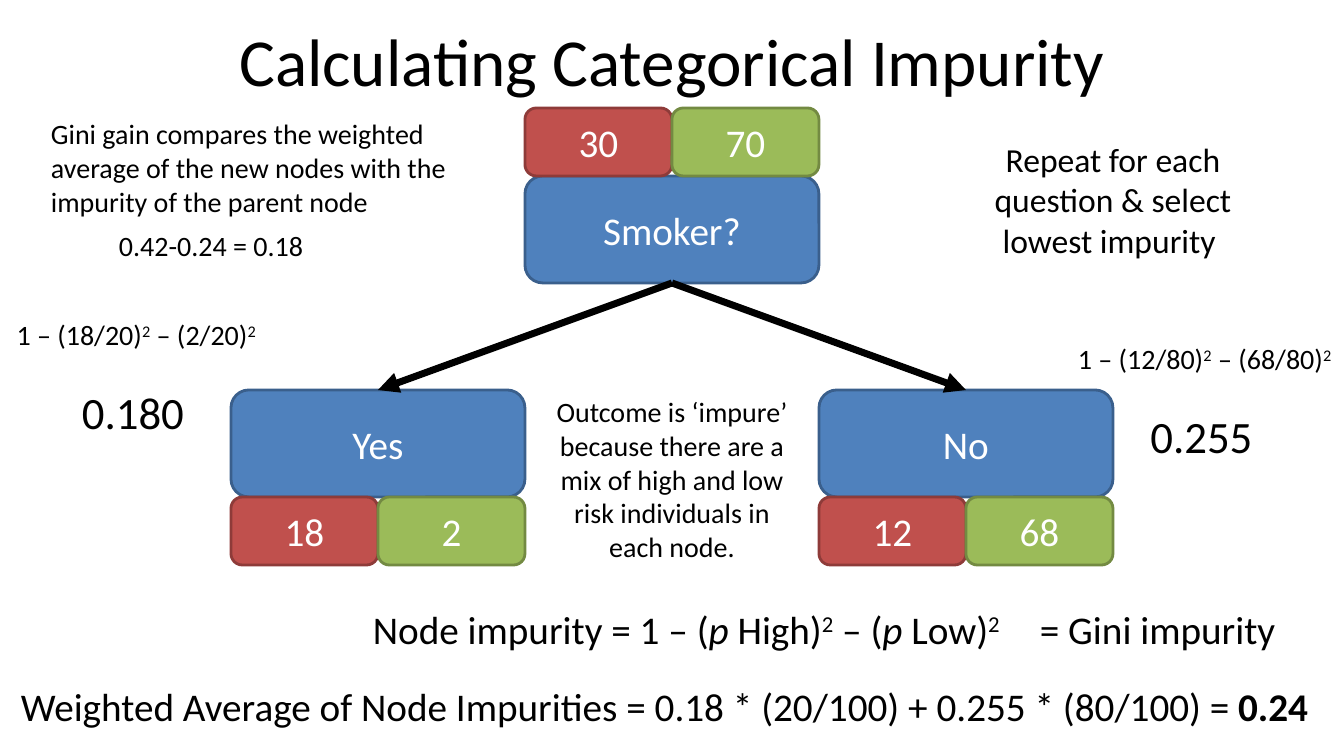
from dataclasses import dataclass

from lxml import etree
from pptx import Presentation
from pptx.dml.color import RGBColor
from pptx.enum.shapes import MSO_CONNECTOR, MSO_SHAPE
from pptx.enum.text import MSO_ANCHOR, PP_ALIGN
from pptx.oxml.ns import qn
from pptx.slide import Slide
from pptx.text.text import TextFrame
from pptx.util import Emu, Pt

ROUNDED = MSO_SHAPE.ROUNDED_RECTANGLE
STRAIGHT = MSO_CONNECTOR.STRAIGHT
MIDDLE = MSO_ANCHOR.MIDDLE
TOP = MSO_ANCHOR.TOP
CENTER = PP_ALIGN.CENTER
LEFT = PP_ALIGN.LEFT

SLIDE_WIDTH, SLIDE_HEIGHT = 1344, 756
EMU_PER_PX = 12192000 / SLIDE_WIDTH
NODE_WIDTH, NODE_HEIGHT = 294, 107
COUNT_WIDTH, COUNT_HEIGHT = NODE_WIDTH // 2, 68
TREE_LEFT = 231
ROOT_TOP, BRANCH_TOP = 176, 390
FONT = "Calibri"
BLACK, WHITE = "000000", "FFFFFF"


@dataclass(frozen=True)
class Palette:
    fill: str
    line: str


QUESTION = Palette("4F81BD", "3A5F8C")
HIGH_RISK = Palette("C0504D", "8E3B39")
LOW_RISK = Palette("9BBB59", "738A42")


@dataclass(frozen=True)
class Words:
    text: str
    italic: bool = False
    bold: bool = False
    raised: bool = False


@dataclass(frozen=True)
class Line:
    words: tuple[Words, ...]
    size: int
    align: PP_ALIGN = LEFT
    before: int = 0


@dataclass(frozen=True)
class Caption:
    left: int
    top: int
    width: int
    height: int
    lines: tuple[Line, ...]
    wrap: bool = True
    anchor: MSO_ANCHOR = TOP


@dataclass(frozen=True)
class Node:
    label: str
    column: int
    top: int
    counts_top: int
    high: int
    low: int

    @property
    def left(self) -> int:
        return TREE_LEFT + self.column * NODE_WIDTH

    @property
    def middle(self) -> int:
        return self.left + COUNT_WIDTH


SQUARED = Words("2", raised=True)


def node_impurity(left: int, top: int, width: int, high: str, low: str, result: str) -> Caption:
    formula = (Words(f" 1 – ({high})"), SQUARED, Words(f" – ({low})"), SQUARED)
    return Caption(left, top, width, 121,
                   (Line(formula, 20, CENTER), Line((Words(result),), 32, CENTER, 24)), wrap=False)


def plain(text: str, size: int, align: PP_ALIGN = LEFT) -> tuple[Line, ...]:
    return (Line((Words(text),), size, align),)


ROOT = Node("Smoker?", 1, ROOT_TOP, ROOT_TOP - COUNT_HEIGHT, 30, 70)
BRANCHES = (
    Node("Yes", 0, BRANCH_TOP, BRANCH_TOP + NODE_HEIGHT, 18, 2),
    Node("No", 2, BRANCH_TOP, BRANCH_TOP + NODE_HEIGHT, 12, 68),
)

GINI_FORMULA = (
    Words("Node impurity = 1 – ("), Words("p ", italic=True), Words("High)"), SQUARED,
    Words(" – ("), Words("p", italic=True), Words(" Low)"), SQUARED,
)
WEIGHTED_AVERAGE = (
    Words("Weighted Average of Node Impurities = 0.18 * (20/100) + 0.255 * (80/100) = "),
    Words("0.24", bold=True),
)

CAPTIONS = (
    Caption(67, -3, 1210, 126, plain("Calculating Categorical Impurity", 48, CENTER), anchor=MIDDLE),
    Caption(539, 390, 266, 179, plain(
        "Outcome is ‘impure’ because there are a mix of high and low risk individuals in each node.",
        20, CENTER)),
    Caption(363, 600, 667, 57, (Line(GINI_FORMULA, 28),), wrap=False),
    node_impurity(-2, 313, 270, "18/20", "2/20", "0.180"),
    node_impurity(1059, 337, 285, "12/80", "68/80", "0.255"),
    Caption(11, 677, 1334, 57, (Line(WEIGHTED_AVERAGE, 28),), wrap=False),
    Caption(980, 134, 266, 132,
            plain("Repeat for each question & select lowest impurity ", 24, CENTER)),
    Caption(1030, 600, 258, 57, plain("= Gini impurity", 28), wrap=False),
    Caption(41, 112, 423, 112, plain(
        "Gini gain compares the weighted average of the new nodes with the impurity of the parent node",
        20)),
    Caption(109, 224, 229, 44, plain("0.42-0.24 = 0.18", 20)),
)


def px(length: int) -> Emu:
    return Emu(round(length * EMU_PER_PX))


def rgb(value: str) -> RGBColor:
    return RGBColor.from_string(value)


def write(frame: TextFrame, lines: tuple[Line, ...], color: str) -> None:
    for index, line in enumerate(lines):
        paragraph = frame.add_paragraph() if index else frame.paragraphs[0]
        paragraph.alignment = line.align
        if line.before:
            paragraph.space_before = Pt(line.before)
        for words in line.words:
            run = paragraph.add_run()
            run.text = words.text
            run.font.name = FONT
            run.font.size = Pt(line.size)
            run.font.italic = words.italic
            run.font.bold = words.bold
            run.font.color.rgb = rgb(color)
            if words.raised:
                run.font._element.set("baseline", "30000")


def draw_box(slide: Slide, left: int, top: int, width: int, height: int,
             label: str, palette: Palette) -> None:
    box = slide.shapes.add_shape(ROUNDED, px(left), px(top), px(width), px(height))
    box.shadow.inherit = False
    box.fill.solid()
    box.fill.fore_color.rgb = rgb(palette.fill)
    box.line.color.rgb = rgb(palette.line)
    box.line.width = Pt(2)
    box.text_frame.vertical_anchor = MIDDLE
    write(box.text_frame, plain(label, 28, CENTER), WHITE)


def draw_node(slide: Slide, node: Node) -> None:
    draw_box(slide, node.left, node.top, NODE_WIDTH, NODE_HEIGHT, node.label, QUESTION)
    for left, count, palette in ((node.left, node.high, HIGH_RISK),
                                 (node.middle, node.low, LOW_RISK)):
        draw_box(slide, left, node.counts_top, COUNT_WIDTH, COUNT_HEIGHT, str(count), palette)


def draw_arrow(slide: Slide, parent: Node, child: Node) -> None:
    arrow = slide.shapes.add_connector(STRAIGHT, px(parent.middle), px(parent.top + NODE_HEIGHT),
                                       px(child.middle), px(child.top))
    arrow.line.color.rgb = rgb(BLACK)
    arrow.line.width = Pt(5)
    etree.SubElement(arrow.line._get_or_add_ln(), qn("a:tailEnd"), type="triangle")
    etree.SubElement(arrow._element.spPr, qn("a:effectLst"))


def draw_caption(slide: Slide, caption: Caption) -> None:
    box = slide.shapes.add_textbox(px(caption.left), px(caption.top),
                                   px(caption.width), px(caption.height))
    box.text_frame.word_wrap = caption.wrap
    box.text_frame.vertical_anchor = caption.anchor
    write(box.text_frame, caption.lines, BLACK)


def main() -> None:
    deck = Presentation()
    deck.slide_width, deck.slide_height = px(SLIDE_WIDTH), px(SLIDE_HEIGHT)
    slide = deck.slides.add_slide(deck.slide_layouts[6])
    for node in (ROOT, *BRANCHES):
        draw_node(slide, node)
    for branch in BRANCHES:
        draw_arrow(slide, ROOT, branch)
    for caption in CAPTIONS:
        draw_caption(slide, caption)
    deck.save("out.pptx")


if __name__ == "__main__":
    main()
